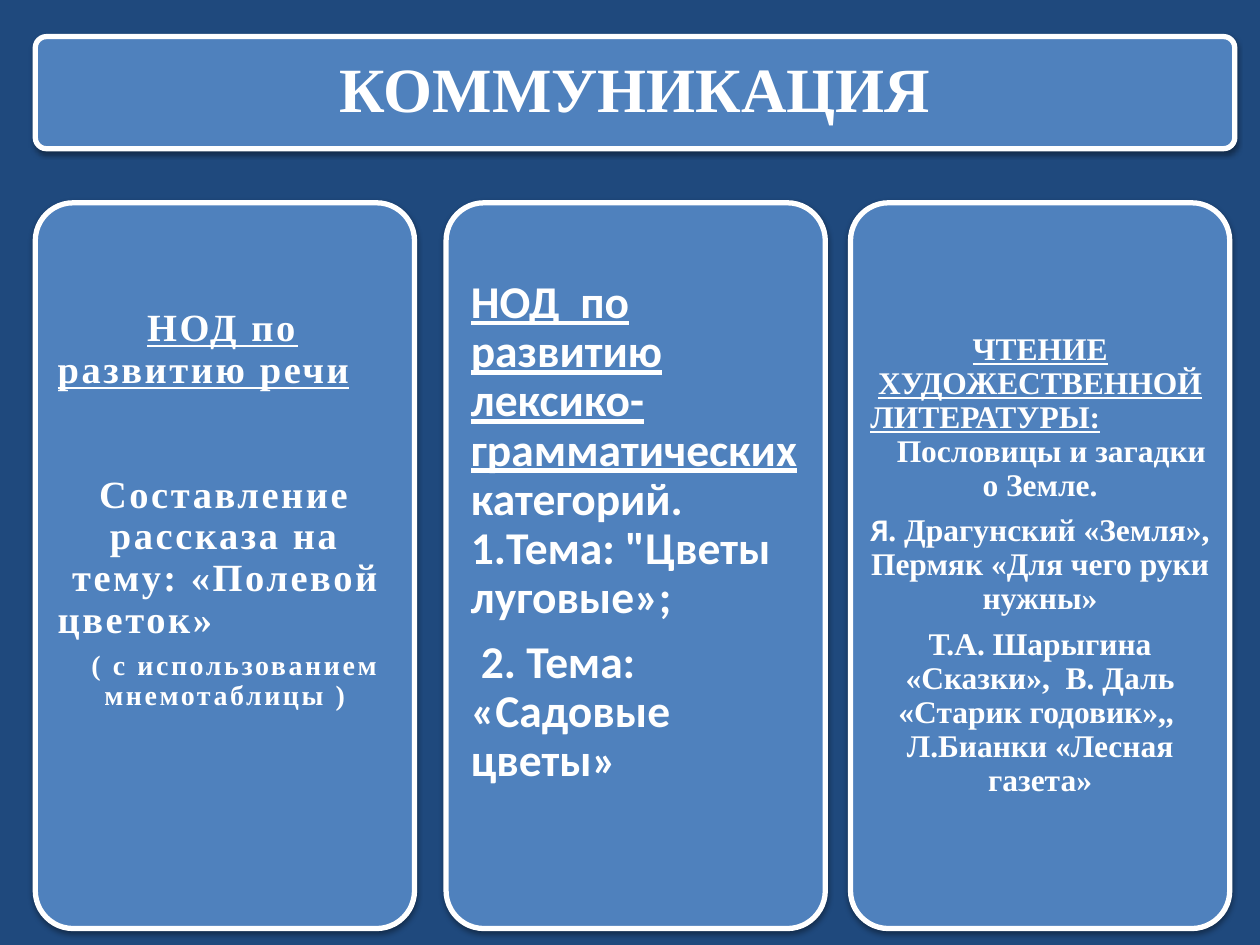
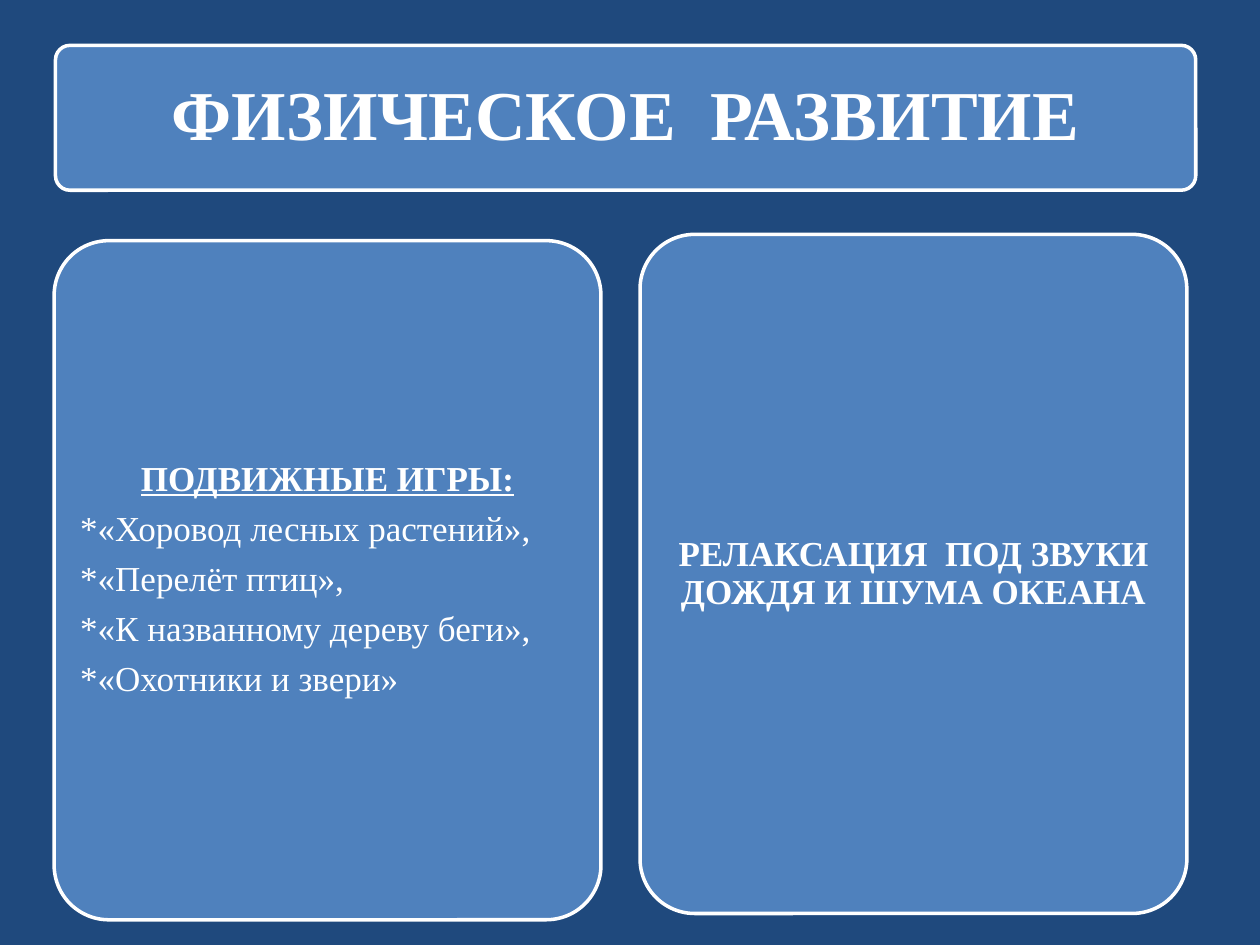
from dataclasses import dataclass, field

from lxml.etree import SubElement
from pptx import Presentation
from pptx.dml.color import RGBColor
from pptx.enum.shapes import MSO_SHAPE
from pptx.enum.text import MSO_ANCHOR, MSO_AUTO_SIZE, PP_ALIGN
from pptx.oxml.ns import qn
from pptx.util import Inches, Pt

NAVY = RGBColor(0x1F, 0x49, 0x7D)
BLUE = RGBColor(0x4F, 0x81, 0xBD)
WHITE = RGBColor(0xFF, 0xFF, 0xFF)
SERIF, SANS = "Times New Roman", "Calibri"
CELL = Inches(0.1)
CORNER = 0.1
CORNER_INSET = 0.29 * CORNER
LINE_SPACING, AFTER_SHARE = 0.9, 0.35
TWO_CONTENT, COMPARISON = 3, 4
UNDERLINED = {"underline": True}


@dataclass
class Line:
    """One paragraph: its runs as (text, font changes) and its layout."""
    runs: list
    alignment: PP_ALIGN = PP_ALIGN.CENTER
    indent: float = 0
    after: float = None
    before: float = 0


@dataclass
class Panel:
    """A rounded panel placed in grid cells, with its text."""
    box: tuple
    lines: list
    size: int
    inset: float
    bottom: float = 0
    tracking: float = 0
    font: dict = field(default_factory=dict)


def set_values(target, values):
    """Set each named attribute of the target."""
    for name, value in values.items():
        setattr(target, name, value)


def add_shadow(shape):
    """Give a shape a soft shadow straight below it."""
    effects = shape._element.spPr.find(qn("a:effectLst"))
    outer = SubElement(effects, qn("a:outerShdw"), blurRad=str(Pt(3.1)),
                       dist=str(Pt(1.6)), dir="5400000", rotWithShape="0")
    color = SubElement(outer, qn("a:srgbClr"), val="000000")
    SubElement(color, qn("a:alpha"), val="38000")


def add_card(slide, box, line_width, shadowed):
    """Draw a blue rounded rectangle with a white outline."""
    card = slide.shapes.add_shape(MSO_SHAPE.ROUNDED_RECTANGLE, *box)
    card.adjustments[0] = CORNER
    card.shadow.inherit = False
    card.fill.solid()
    card.fill.fore_color.rgb = BLUE
    card.line.color.rgb = WHITE
    card.line.width = Pt(line_width)
    if shadowed:
        add_shadow(card)
    return card


def write_line(paragraph, line, panel):
    """Fill one paragraph with formatted runs and no bullet."""
    after = AFTER_SHARE * panel.size if line.after is None else line.after
    set_values(paragraph, {
        "alignment": line.alignment, "line_spacing": LINE_SPACING,
        "space_before": Pt(line.before), "space_after": Pt(after)})
    properties = paragraph._p.get_or_add_pPr()
    properties.set("marL", "0")
    properties.set("indent", str(Inches(line.indent)))
    SubElement(properties, qn("a:buNone"))
    for text, changes in line.runs:
        run = paragraph.add_run()
        run.text = text
        values = {"name": SERIF, "size": Pt(panel.size), "bold": True,
                  "underline": False}
        set_values(run.font, values | panel.font | changes)
        run.font.color.rgb = WHITE
        if panel.tracking:
            run._r.get_or_add_rPr().set("spc", str(int(panel.tracking * 100)))


def fill_panel(slide, placeholder, panel, line_width, shadowed):
    """Place a card and lay the placeholder's text over it."""
    left, top, width, height = (int(cells * CELL) for cells in panel.box)
    card = add_card(slide, (left, top, width, height), line_width, shadowed)
    slide.shapes._spTree.append(placeholder._element)
    edge = int(min(width, height) * CORNER_INSET)
    set_values(placeholder, {
        "left": left + edge, "top": top + edge,
        "width": card.width - 2 * edge, "height": card.height - 2 * edge})
    frame = placeholder.text_frame
    inset = Inches(panel.inset)
    set_values(frame, {
        "word_wrap": True, "auto_size": MSO_AUTO_SIZE.NONE,
        "vertical_anchor": MSO_ANCHOR.MIDDLE,
        "margin_left": inset, "margin_right": inset, "margin_top": inset,
        "margin_bottom": inset + Inches(panel.bottom)})
    for index, line in enumerate(panel.lines):
        paragraph = frame.add_paragraph() if index else frame.paragraphs[0]
        write_line(paragraph, line, panel)


def add_panel_slide(presentation, layout, panels, line_width, shadowed=False):
    """Add a slide whose title and body placeholders sit on panels."""
    slide = presentation.slides.add_slide(presentation.slide_layouts[layout])
    placeholders = list(slide.placeholders)
    for placeholder, panel in zip(placeholders, panels):
        fill_panel(slide, placeholder, panel, line_width, shadowed)
    for placeholder in placeholders[len(panels):]:
        slide.shapes._spTree.remove(placeholder._element)


def communication_panels():
    """Return the title and the three lesson cards."""
    left = PP_ALIGN.LEFT
    small = {"size": Pt(16)}
    speech = [
        Line([("НОД по развитию речи", UNDERLINED)], left, 0.71, 47.6),
        Line([("Составление рассказа на тему: «Полевой", {})], after=0),
        Line([("цветок»", {})], left, after=0),
        Line([("( с использованием мнемотаблицы )", small)],
             indent=0.17, before=5.8)]
    grammar = [
        Line([("НОД  по развитию лексико-грамматических ", UNDERLINED),
              ("категорий. 1.Тема: \"Цветы луговые»;", {})], left),
        Line([("2. Тема: «Садовые цветы»", {})], left, 0.08)]
    reading = [
        Line([("ЧТЕНИЕ ХУДОЖЕСТВЕННОЙ", UNDERLINED)], after=0),
        Line([("ЛИТЕРАТУРЫ:", UNDERLINED)], left, after=0),
        Line([("Пословицы и загадки о Земле.", {})], indent=0.18),
        Line([("Я", {"name": SANS}),
              (". Драгунский «Земля», Пермяк «Для чего руки нужны»", {})]),
        Line([("Т.А. Шарыгина «Сказки»,  В. Даль «Старик годовик»,,  "
               "Л.Бианки «Лесная газета»", {})])]
    top, width, height = 16.1, 30.1, 57.6
    return [
        Panel((2.8, 2.9, 95.2, 8.9), [Line([("КОММУНИКАЦИЯ", {})])], 36, 0.15),
        Panel((2.8, top, width, height), speech, 22, 0.09, 0.88, 1.5),
        Panel((35.4, top, width, height), grammar, 26, 0.11, 0.52,
              font={"name": SANS}),
        Panel((67.5, top, width, height), reading, 18, 0.07)]


def physical_panels():
    """Return the title, the list of games and the relaxation card."""
    games = ["«Хоровод лесных растений»,", "«Перелёт птиц»,",
             "«К названному дереву беги»,", "«Охотники и звери»"]
    game_lines = [Line([("ПОДВИЖНЫЕ ИГРЫ:", UNDERLINED)])] + [
        Line([("*" + game, {"bold": False})], PP_ALIGN.LEFT) for game in games]
    relaxation = [Line([("РЕЛАКСАЦИЯ  ПОД ЗВУКИ ДОЖДЯ И ШУМА ОКЕАНА", {})])]
    width, height = 43.4, 53.9
    return [
        Panel((4.4, 3.6, 90.5, 11.5),
              [Line([("ФИЗИЧЕСКОЕ  РАЗВИТИЕ", {})])], 40, 0.17),
        Panel((4.3, 19.1, width, height), game_lines, 20, 0.08),
        Panel((50.8, 18.6, width, height), relaxation, 20, 0.08)]


def main():
    """Build both slides and save them."""
    presentation = Presentation()
    presentation.slide_width = 100 * CELL
    presentation.slide_height = 75 * CELL
    background = presentation.slide_master.background.fill
    background.solid()
    background.fore_color.rgb = NAVY
    add_panel_slide(presentation, COMPARISON, communication_panels(), 3, True)
    add_panel_slide(presentation, TWO_CONTENT, physical_panels(), 2)
    presentation.save("out.pptx")


if __name__ == "__main__":
    main()
